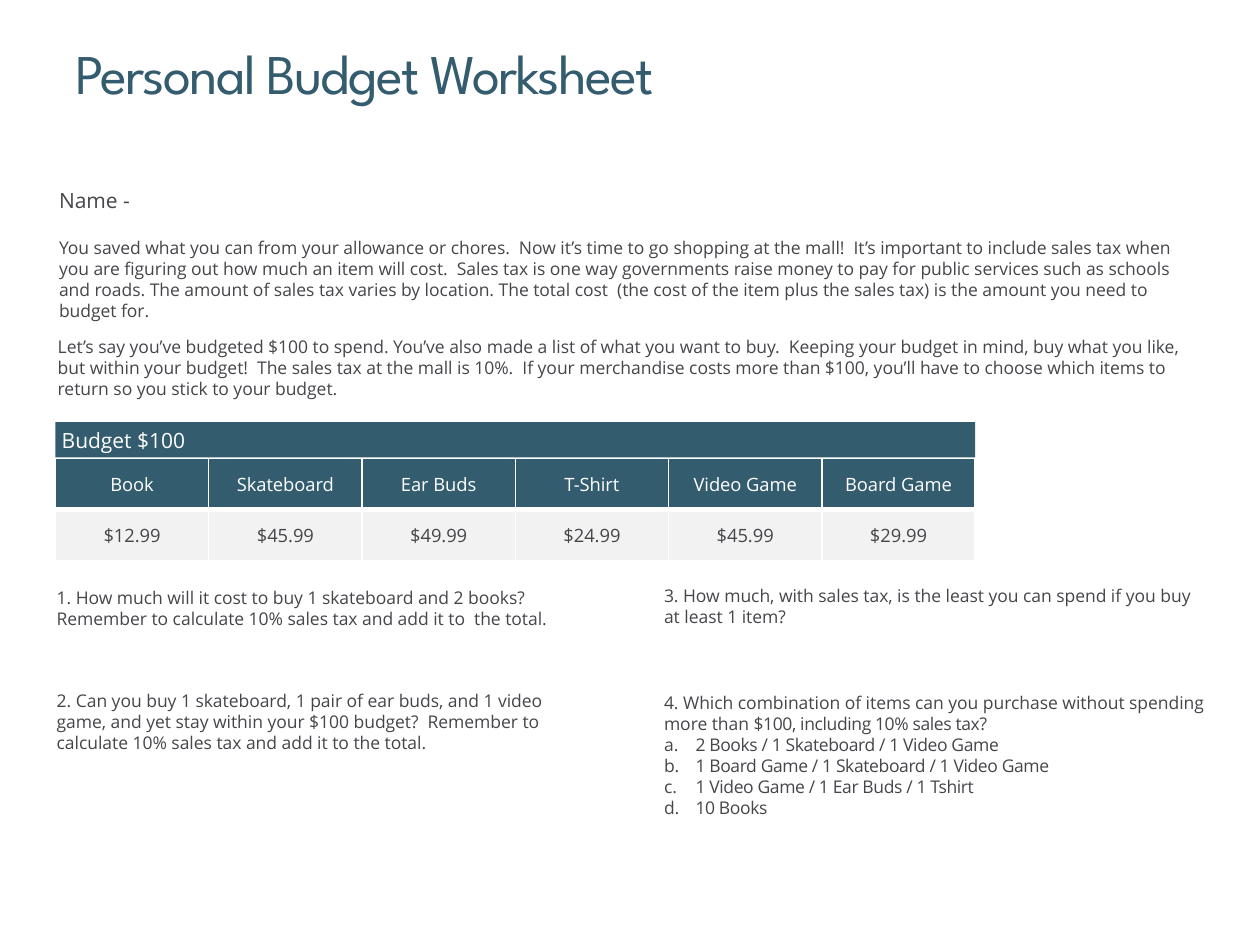
from dataclasses import dataclass

from lxml.etree import SubElement
from pptx import Presentation
from pptx.dml.color import RGBColor
from pptx.enum.shapes import MSO_SHAPE
from pptx.enum.text import MSO_ANCHOR, PP_ALIGN
from pptx.oxml.ns import qn
from pptx.util import Inches, Pt


@dataclass(frozen=True)
class Theme:
    teal: str = "345C6F"
    ink: str = "44464A"
    pale: str = "F2F2F2"
    white: str = "FFFFFF"
    heading_font: str = "League Spartan"
    body_font: str = "Open Sans"
    title_size: float = 32
    label_size: float = 12
    table_size: float = 10.5
    body_size: float = 10


THEME = Theme()
ITEMS = [
    ("Book", "$12.99"),
    ("Skateboard", "$45.99"),
    ("Ear Buds", "$49.99"),
    ("T-Shirt", "$24.99"),
    ("Video Game", "$45.99"),
    ("Board Game", "$29.99"),
]
INTRODUCTION = (
    "You saved what you can from your allowance or chores.  Now it’s time to go shopping at the mall!  "
    "It’s important to include sales tax when you are figuring out how much an item will cost.  "
    "Sales tax is one way governments raise money to pay for public services such as schools and roads. "
    "The amount of sales tax varies by location. The total cost  (the cost of the item plus the sales tax) "
    "is the amount you need to budget for."
)
SCENARIO = (
    "Let’s say you’ve budgeted $100 to spend. You’ve also made a list of what you want to buy.  "
    "Keeping your budget in mind, buy what you like, but within your budget!  "
    "The sales tax at the mall is 10%.  If your merchandise costs more than $100, "
    "you’ll have to choose which items to return so you stick to your budget."
)
QUESTIONS = [
    (0.45, 4.66, 4.38, 0.5,
     "1. How much will it cost to buy 1 skateboard and 2 books? "
     "Remember to calculate 10% sales tax and add it to  the total."),
    (0.45, 5.48, 4.21, 0.67,
     "2. Can you buy 1 skateboard, 1 pair of ear buds, and 1 video game, and yet stay within your "
     "$100 budget?  Remember to calculate 10% sales tax and add it to the total."),
    (5.27, 4.64, 4.32, 0.5,
     "3. How much, with sales tax, is the least you can spend if you buy at least 1 item?"),
]
CHOICE_QUESTION = "4. Which combination of items can you purchase without spending more than "
CHOICE_ENDING = "$100, including 10% sales tax?"
CHOICES = [
    "2 Books / 1 Skateboard / 1 Video Game",
    "1 Board Game / 1 Skateboard / 1 Video Game",
    "1 Video Game / 1 Ear Buds / 1 Tshirt",
    "10 Books",
]


def style(paragraph, size=THEME.body_size, color=THEME.ink, font=THEME.body_font):
    paragraph.font.size = Pt(size)
    paragraph.font.name = font
    paragraph.font.color.rgb = RGBColor.from_string(color)


def set_tracking(run, points):
    run.font._element.set("spc", str(round(points * 100)))


def add_text(slide, left, top, width, height, text, inset=True, **look):
    box = slide.shapes.add_textbox(Inches(left), Inches(top), Inches(width), Inches(height))
    frame = box.text_frame
    frame.word_wrap = True
    if not inset:
        frame.margin_left = frame.margin_right = frame.margin_top = frame.margin_bottom = 0
    paragraph = frame.paragraphs[0]
    paragraph.add_run().text = text
    style(paragraph, **look)
    return frame


def add_title(slide):
    frame = add_text(slide, 0.6, 0.28, 8.8, 1.1, "Personal Budget Worksheet", inset=False,
                     size=THEME.title_size, color=THEME.teal, font=THEME.heading_font)
    paragraph = frame.paragraphs[0]
    paragraph.line_spacing = 1.05
    set_tracking(paragraph.runs[0], -1)


def add_budget_bar(slide):
    bar = slide.shapes.add_shape(MSO_SHAPE.RECTANGLE, Inches(0.44), Inches(3.35), Inches(7.3), Inches(0.28))
    bar.shadow.inherit = False
    bar.fill.solid()
    bar.fill.fore_color.rgb = RGBColor.from_string(THEME.teal)
    bar.line.fill.background()
    frame = bar.text_frame
    frame.margin_left = Inches(0.05)
    frame.margin_right = frame.margin_top = frame.margin_bottom = 0
    frame.vertical_anchor = MSO_ANCHOR.MIDDLE
    paragraph = frame.paragraphs[0]
    paragraph.text = "Budget $100"
    paragraph.alignment = PP_ALIGN.LEFT
    style(paragraph, THEME.label_size, THEME.white)


def set_borders(cell, widths):
    properties = cell._tc.get_or_add_tcPr()
    for position, (side, width) in enumerate(widths.items()):
        line = properties.makeelement(qn(f"a:{side}"), {"w": str(Pt(width))})
        fill = SubElement(line, qn("a:solidFill"))
        SubElement(fill, qn("a:srgbClr"), val=THEME.white)
        properties.insert(position, line)


def fill_cell(cell, text, background, color, bottom, top):
    cell.fill.solid()
    cell.fill.fore_color.rgb = RGBColor.from_string(background)
    cell.vertical_anchor = MSO_ANCHOR.MIDDLE
    paragraph = cell.text_frame.paragraphs[0]
    paragraph.text = text
    paragraph.alignment = PP_ALIGN.CENTER
    style(paragraph, THEME.table_size, color)
    set_borders(cell, {"lnL": 1, "lnR": 1, "lnT": top, "lnB": bottom})


def add_price_table(slide):
    table = slide.shapes.add_table(2, len(ITEMS), Inches(0.44), Inches(3.64), Inches(7.3), Inches(0.81)).table
    for index, (item, price) in enumerate(ITEMS):
        fill_cell(table.cell(0, index), item, THEME.teal, THEME.white, bottom=3, top=1)
        fill_cell(table.cell(1, index), price, THEME.pale, THEME.ink, bottom=1, top=3)


def add_choice_question(slide):
    frame = add_text(slide, 5.27, 5.49, 4.32, 1.01, CHOICE_QUESTION, inset=False)
    ending = frame.paragraphs[0].add_run()
    ending.text = CHOICE_ENDING
    set_tracking(ending, -0.2)
    for choice in CHOICES:
        paragraph = frame.add_paragraph()
        run = paragraph.add_run()
        run.text = choice
        set_tracking(run, -0.2)
        properties = paragraph._p.get_or_add_pPr()
        properties.set("marL", str(Inches(0.25)))
        properties.set("indent", str(Inches(-0.25)))
        SubElement(properties, qn("a:buAutoNum"), type="alphaLcPeriod")
        style(paragraph)


def main():
    presentation = Presentation()
    presentation.slide_width = Inches(10)
    presentation.slide_height = Inches(7.5)
    slide = presentation.slides.add_slide(presentation.slide_layouts[6])
    add_title(slide)
    add_text(slide, 0.37, 1.44, 3.21, 0.3, "Name -", size=THEME.label_size)
    add_text(slide, 0.37, 1.83, 9.22, 0.77, INTRODUCTION)
    add_text(slide, 0.36, 2.62, 9.22, 0.61, SCENARIO)
    add_budget_bar(slide)
    add_price_table(slide)
    for question in QUESTIONS:
        add_text(slide, *question, inset=False)
    add_choice_question(slide)


    presentation.save("out.pptx")


if __name__ == "__main__":
    main()
